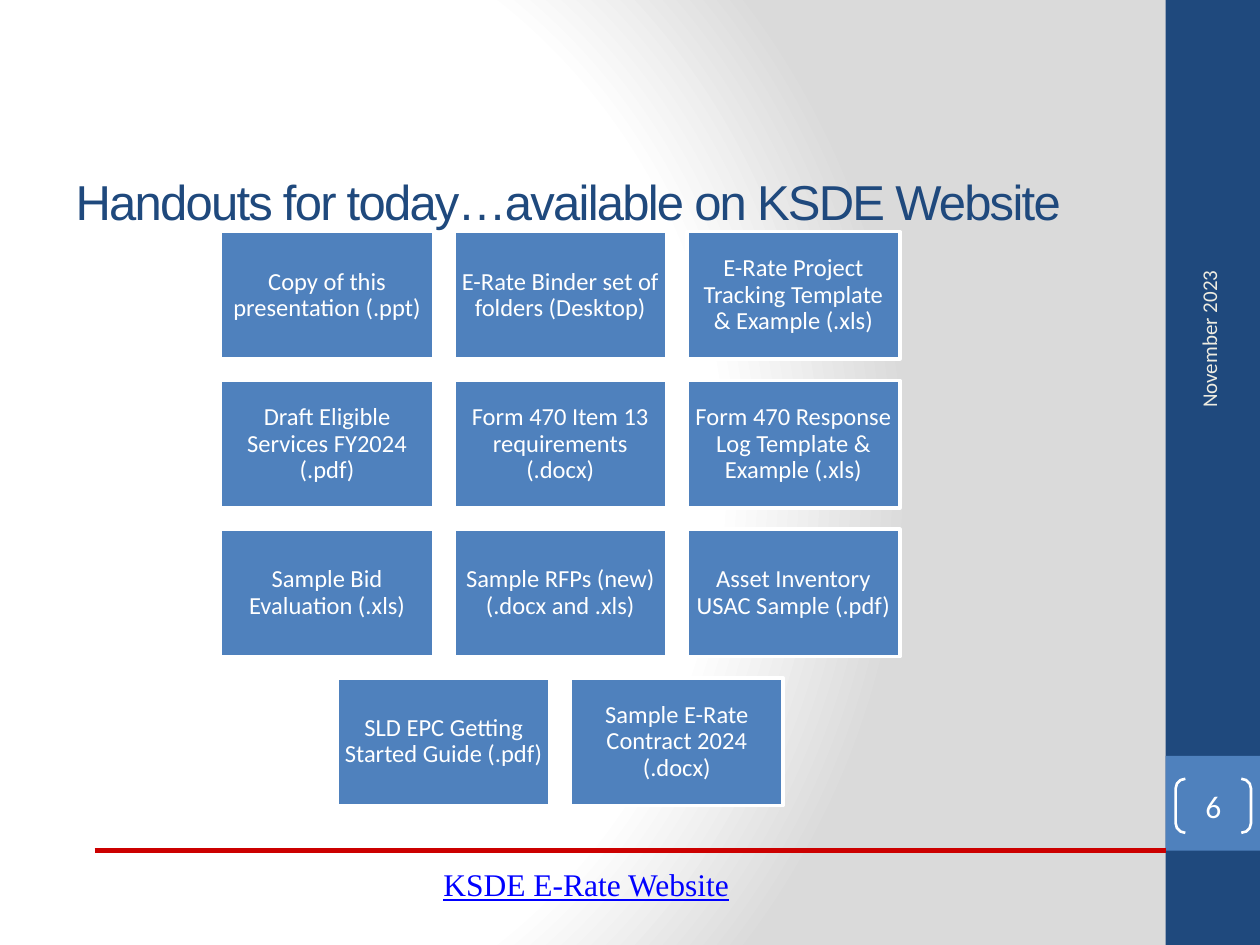
from pptx import Presentation
from pptx.dml.color import RGBColor
from pptx.enum.shapes import MSO_CONNECTOR, MSO_SHAPE
from pptx.enum.text import MSO_ANCHOR, PP_ALIGN
from pptx.oxml import parse_xml
from pptx.oxml.ns import nsdecls, qn
from pptx.util import Cm, Pt
from lxml.etree import SubElement

NAVY, BLUE, RED, WHITE = "1F497D", "4F81BD", "CC0000", "FFFFFF"


def tint(code):
    return RGBColor.from_string(code)


class Deck:
    font = "Calibri"

    def __init__(self, slide):
        self.slide = slide
        self.shapes = slide.shapes

    def ground(self, stops):
        marks = "".join(
            f'<a:gs pos="{pos * 1000}"><a:srgbClr val="{code}"/></a:gs>'
            for pos, code in stops
        )
        back = parse_xml(
            f'<p:bg {nsdecls("p", "a")}><p:bgPr><a:gradFill rotWithShape="1">'
            f'<a:gsLst>{marks}</a:gsLst><a:path path="circle">'
            '<a:fillToRect l="20000" t="50000" r="100000" b="50000"/>'
            "</a:path></a:gradFill><a:effectLst/></p:bgPr></p:bg>"
        )
        self.slide.element.cSld.insert(0, back)

    def letter(self, shape, text, size, color, align=PP_ALIGN.LEFT,
               font=None, inset=None, anchor=MSO_ANCHOR.MIDDLE):
        frame = shape.text_frame
        frame.text = text
        frame.word_wrap = True
        frame.vertical_anchor = anchor
        if inset is not None:
            frame.margin_left = frame.margin_right = Cm(inset)
            frame.margin_top = frame.margin_bottom = Cm(inset)
        para = frame.paragraphs[0]
        para.alignment = align
        run = para.runs[0]
        run.font.name = font or self.font
        run.font.size = Pt(size)
        run.font.color.rgb = tint(color)
        return run

    def block(self, box, fill=None, line=None, width=0, kind=MSO_SHAPE.RECTANGLE):
        shape = self.shapes.add_shape(kind, *map(Cm, box))
        shape.shadow.inherit = False
        if fill:
            shape.fill.solid()
            shape.fill.fore_color.rgb = tint(fill)
        else:
            shape.fill.background()
        if line:
            shape.line.color.rgb = tint(line)
            shape.line.width = Pt(width)
        else:
            shape.line.fill.background()
        return shape

    def card(self, box, text):
        shape = self.block(box, BLUE, WHITE, 2)
        self.letter(shape, text, 14, WHITE, PP_ALIGN.CENTER, inset=0.15)
        shape.text_frame.paragraphs[0].line_spacing = 0.9

    def rule(self, left, right, top):
        line = self.shapes.add_connector(
            MSO_CONNECTOR.STRAIGHT, Cm(left), Cm(top), Cm(right), Cm(top))
        line.line.color.rgb = tint(RED)
        line.line.width = Pt(3)
        SubElement(line._element.spPr, qn("a:effectLst"))

    def title(self, box, text):
        shape = self.shapes.title
        shape.left, shape.top, shape.width, shape.height = map(Cm, box)
        run = self.letter(shape, text, 28, NAVY, font="Arial")
        run.font._element.set("spc", "-100")
        self.shapes._spTree.append(shape._element)

    def label(self, box, text, size, color, turn=0, **style):
        shape = self.shapes.add_textbox(*map(Cm, box))
        shape.rotation = turn
        return self.letter(shape, text, size, color, **style)

    def badge(self, box, text):
        shape = self.block(box, None, WHITE, 1.5, MSO_SHAPE.DOUBLE_BRACKET)
        shape.adjustments[0] = 0.18
        self.letter(shape, text, 18, WHITE, PP_ALIGN.CENTER, inset=0)


def main():
    show = Presentation()
    show.slide_width, show.slide_height = Cm(25.4), Cm(19.05)
    deck = Deck(show.slides.add_slide(show.slide_layouts[5]))
    deck.ground([(0, WHITE), (75, WHITE), (100, "DADADA")])
    deck.block((23.5, 0, 1.9, 19.05), NAVY)
    deck.block((23.5, 15.24, 1.9, 1.91), BLUE)
    deck.rule(1.91, 23.5, 17.15)

    rows = [
        ["Copy of this presentation (.ppt)",
         "E-Rate Binder set of folders (Desktop)",
         "E-Rate Project Tracking Template & Example (.xls)"],
        ["Draft Eligible Services FY2024 (.pdf)",
         "Form 470 Item 13 requirements (.docx)",
         "Form 470 Response Log Template & Example (.xls)"],
        ["Sample Bid Evaluation (.xls)",
         "Sample RFPs (new) (.docx and .xls)",
         "Asset Inventory USAC Sample (.pdf)"],
        ["SLD EPC Getting Started Guide (.pdf)",
         "Sample E-Rate Contract 2024 (.docx)"],
    ]
    step = 4.7
    for row, names in enumerate(rows):
        left = 4.45 + (3 - len(names)) * step / 2
        for col, name in enumerate(names):
            deck.card((left + col * step, 4.67 + row * 3, 4.29, 2.57), name)

    deck.title((1.27, 3.05, 21.16, 1.98),
               "Handouts for today…available on KSDE Website")
    deck.label((20.98, 4.57, 6.78, 1.02), "November 2023", 12, "EEECE1", 270)
    deck.badge((23.7, 15.7, 1.52, 1.09), "6")
    link = deck.label((8.69, 17.32, 11.86, 1.02), "KSDE E-Rate Website", 18,
                      "0000FF", font="Times New Roman", anchor=MSO_ANCHOR.TOP)
    link.font.underline = True
    show.save("out.pptx")


if __name__ == "__main__":
    main()
